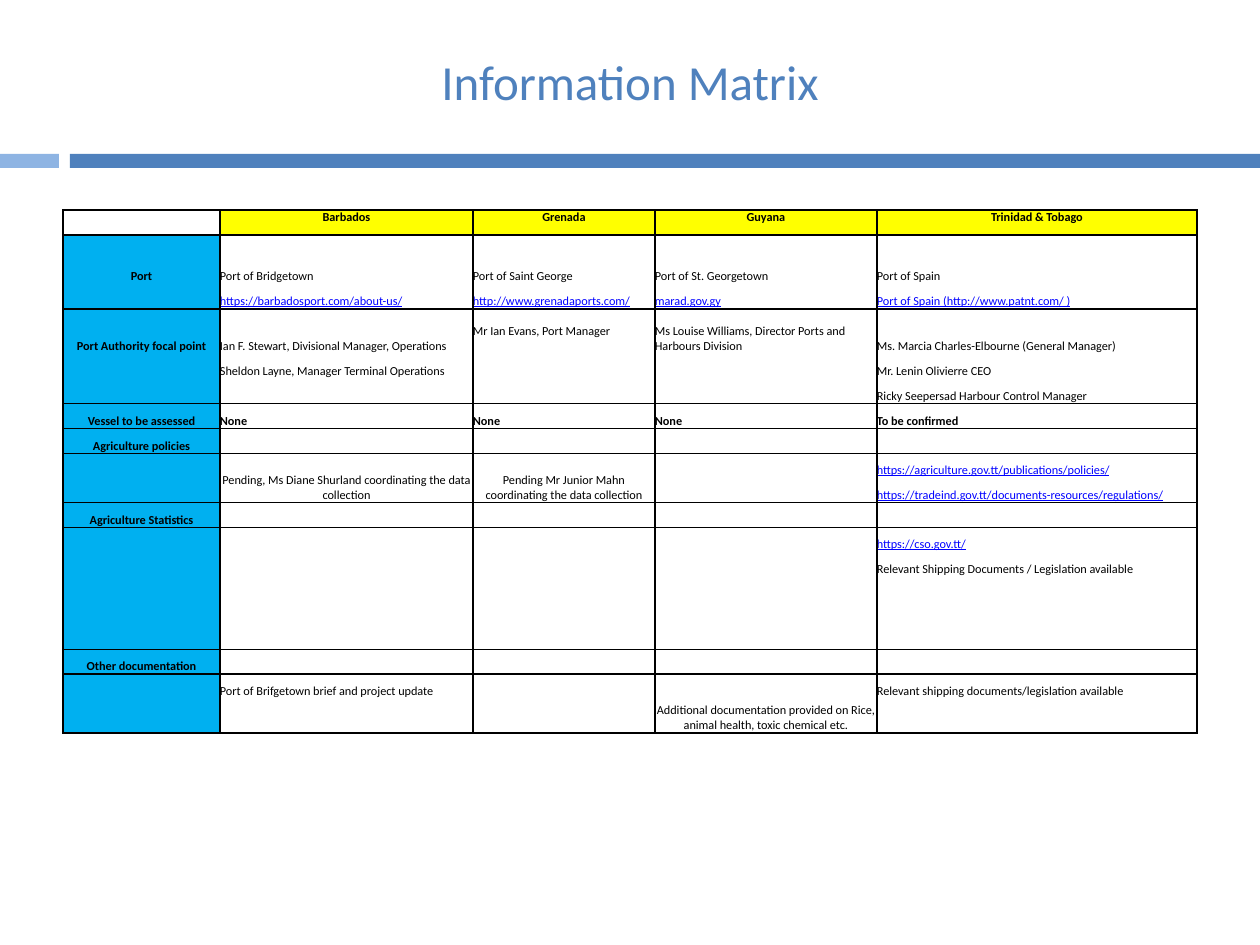
from lxml import etree
from pptx import Presentation
from pptx.dml.color import RGBColor
from pptx.enum.shapes import MSO_SHAPE
from pptx.enum.text import MSO_ANCHOR as ANCHOR, PP_ALIGN as ALIGN
from pptx.oxml.ns import qn
from pptx.util import Pt

PX = 914400 / 126
FONT = "Calibri"
COLORS = {
    "blue": "4F81BD",
    "light_blue": "8EB4E3",
    "header": "FFFF00",
    "label": "00B0F0",
    "text": "000000",
    "link": "0000FF",
}
COL_WIDTHS = [157, 253, 182, 222, 320]
ROW_HEIGHTS = [25, 24, 25, 25, 45, 25, 25, 25, 25, 24,
               25, 25, 24, 25, 24, 25, 24, 25, 25, 34]
GROUPS = [(1, 3), (4, 6), (9, 10), (12, 16), (18, 19)]
MERGED = {(9, 1): 10, (9, 2): 10, (18, 3): 19}
BOLD_ROWS = (0, 7)
MIDDLE_CELL = (4, 2)
ROWS = {
    0: ["", "Barbados", "Grenada", "Guyana", "Trinidad & Tobago"],
    2: ["Port", "Port of Bridgetown", "Port of Saint George",
        "Port of St. Georgetown", "Port of Spain"],
    3: ["", "https://barbadosport.com/about-us/", "http://www.grenadaports.com/",
        "marad.gov.gy", "Port of Spain (http://www.patnt.com/ )"],
    4: ["Port Authority focal point",
        "Ian F. Stewart, Divisional Manager, Operations",
        "Mr Ian Evans, Port Manager",
        "Ms Louise Williams, Director Ports and Harbours Division",
        "Ms. Marcia Charles-Elbourne (General Manager)"],
    5: ["", "Sheldon Layne, Manager Terminal Operations", "", "",
        "Mr. Lenin Olivierre CEO"],
    6: ["", "", "", "", "Ricky Seepersad Harbour Control Manager"],
    7: ["Vessel to be assessed", "None", "None", "None", "To be confirmed"],
    8: ["Agriculture policies"],
    9: ["", "Pending, Ms Diane Shurland coordinating the data collection",
        "Pending Mr Junior Mahn coordinating the data collection", "",
        "https://agriculture.gov.tt/publications/policies/"],
    10: ["", "", "", "", "https://tradeind.gov.tt/documents-resources/regulations/"],
    11: ["Agriculture Statistics"],
    12: ["", "", "", "", "https://cso.gov.tt/"],
    13: ["", "", "", "", "Relevant Shipping Documents / Legislation available"],
    17: ["Other documentation"],
    18: ["", "Port of Brifgetown brief and project update", "",
         "Additional documentation provided on Rice, animal health, toxic chemical etc.",
         "Relevant shipping documents/legislation available"],
}


def px(n):
    return round(n * PX)


def box(*lengths):
    return [px(n) for n in lengths]


def rgb(name):
    return RGBColor.from_string(COLORS[name])


def add_run(p, text, size, color, bold=False, underline=False):
    r = p.add_run()
    r.text = text
    f = r.font
    f.name, f.size, f.bold = FONT, Pt(size), bold
    f.underline = underline
    f.color.rgb = rgb(color)


def add_bar(slide, left, width, color):
    sp = slide.shapes.add_shape(MSO_SHAPE.RECTANGLE, *box(left, 154, width, 14))
    sp.shadow.inherit = False
    sp.fill.solid()
    sp.fill.fore_color.rgb = rgb(color)
    sp.line.fill.background()


def add_title(slide, text):
    tf = slide.shapes.add_textbox(*box(63, 17, 1134, 128)).text_frame
    tf.word_wrap = True
    tf.vertical_anchor = ANCHOR.MIDDLE
    p = tf.paragraphs[0]
    p.alignment = ALIGN.CENTER
    add_run(p, text, 28, "blue")


def set_borders(cell, visible):
    tc_pr = cell._tc.get_or_add_tcPr()
    for index, side in enumerate("LRTB"):
        ln = etree.Element(qn(f"a:ln{side}"), w=str(Pt(1)))
        if side in visible:
            fill = etree.SubElement(ln, qn("a:solidFill"))
            etree.SubElement(fill, qn("a:srgbClr"), val=COLORS["text"])
        else:
            etree.SubElement(ln, qn("a:noFill"))
        tc_pr.insert(index, ln)


def visible_sides(row, col):
    sides = "LRTB"
    for first, last in GROUPS:
        if first <= row <= last:
            if row > first:
                sides = sides.replace("T", "")
            if row < last and (row, col) not in MERGED:
                sides = sides.replace("B", "")
    return sides


def fill_cell(cell, row, col):
    if col == 0 and row > 0:
        color = "label"
    elif row == 0 and col > 0:
        color = "header"
    else:
        color = None
    if color:
        cell.fill.solid()
        cell.fill.fore_color.rgb = rgb(color)
    else:
        cell.fill.background()


def write_cell(cell, row, col, text):
    cell.margin_left = cell.margin_right = cell.margin_top = cell.margin_bottom = 0
    if row > 0:
        cell.vertical_anchor = ANCHOR.MIDDLE if (row, col) == MIDDLE_CELL else ANCHOR.BOTTOM
    p = cell.text_frame.paragraphs[0]
    if text:
        centred = row == 0 or col == 0 or (row, col) in MERGED
        p.alignment = ALIGN.CENTER if centred else ALIGN.LEFT
        link = "://" in text or ".gov." in text
        add_run(p, text, 7, "link" if link else "text",
                bold=col == 0 or row in BOLD_ROWS, underline=link)
    else:
        etree.SubElement(p._p, qn("a:endParaRPr"), sz="700")


def add_matrix(slide):
    frame = slide.shapes.add_table(
        len(ROW_HEIGHTS), len(COL_WIDTHS),
        *box(63, 210, sum(COL_WIDTHS), sum(ROW_HEIGHTS)))
    table = frame.table
    table.first_row = table.horz_banding = False
    for column, width in zip(table.columns, COL_WIDTHS):
        column.width = px(width)
    for row, height in enumerate(ROW_HEIGHTS):
        table.rows[row].height = px(height)
        texts = ROWS.get(row, [])
        for col in range(len(COL_WIDTHS)):
            cell = table.cell(row, col)
            write_cell(cell, row, col, texts[col] if col < len(texts) else "")
            fill_cell(cell, row, col)
            set_borders(cell, visible_sides(row, col))
    for (row, col), last in MERGED.items():
        table.cell(row, col).merge(table.cell(last, col))


def main():
    prs = Presentation()
    prs.slide_width, prs.slide_height = box(1260, 945)
    slide = prs.slides.add_slide(prs.slide_layouts[6])
    add_bar(slide, 70, 1190, "blue")
    add_bar(slide, 0, 59, "light_blue")
    add_title(slide, "Information Matrix")
    add_matrix(slide)
    prs.save("out.pptx")


if __name__ == "__main__":
    main()
